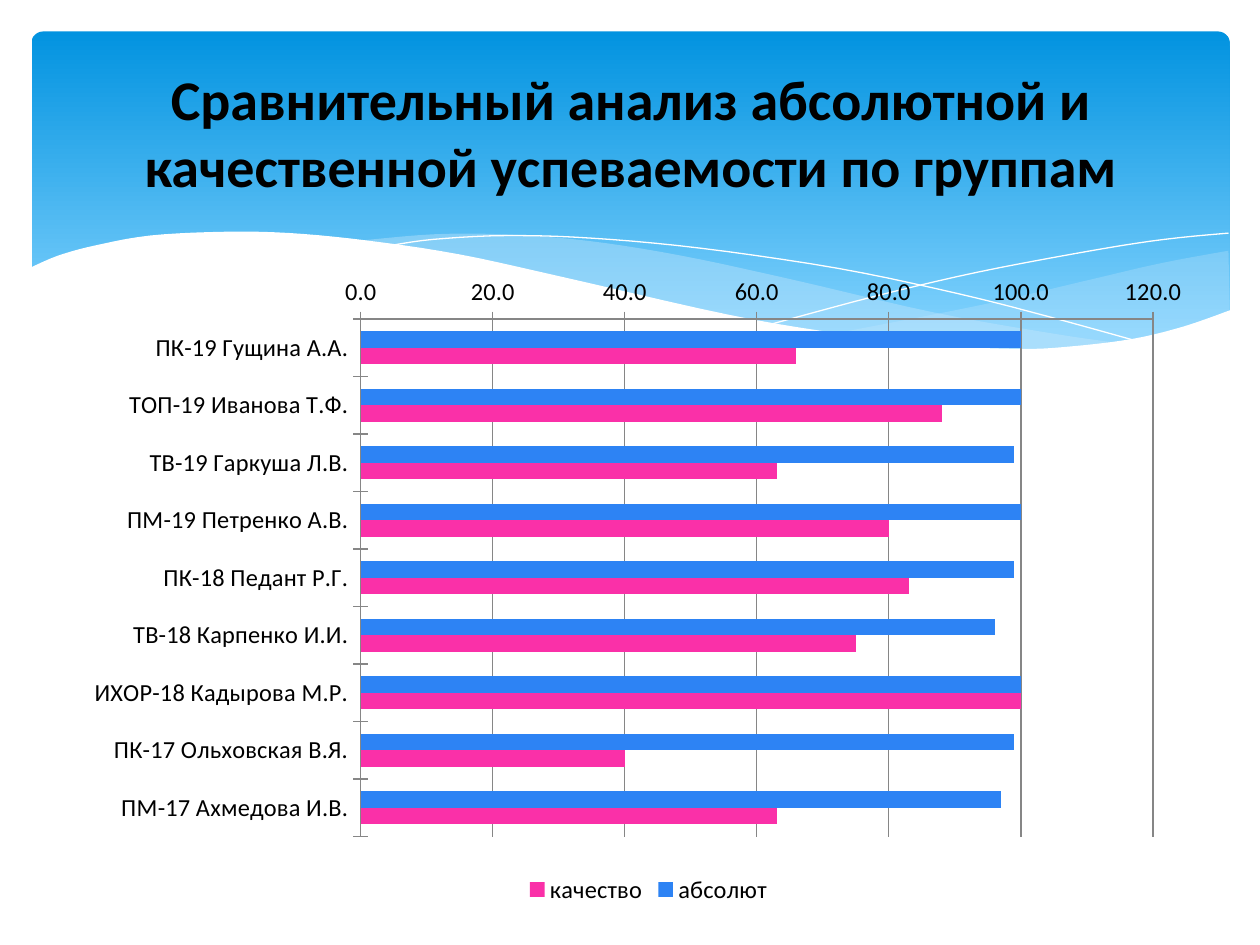
from lxml import etree
from pptx import Presentation
from pptx import util as u
from pptx.chart.data import CategoryChartData
from pptx.dml.color import RGBColor
from pptx.enum import chart as ch, shapes, text
from pptx.oxml import parse_xml
from pptx.oxml.ns import qn

FONT = "Calibri"
A = "http://schemas.openxmlformats.org/drawingml/2006/main"
C = "http://schemas.openxmlformats.org/drawingml/2006/chart"

# Each wave is a list of curves; a curve is a list of points it runs through.
RIGHT = [
    [(9.75, 1.99), (9.21, 2.09), (8.61, 2.23), (7.79, 2.42), (6.61, 2.65)],
    [(6.61, 2.65), (7.18, 2.72), (7.69, 2.77), (8.14, 2.78), (8.63, 2.75),
     (9.05, 2.69), (9.42, 2.59), (9.76, 2.47)],
]
MIDDLE = [
    [(8.93, 2.73), (8.37, 2.65), (7.41, 2.48), (6.29, 2.22), (5.41, 2.03),
     (4.65, 1.91), (3.99, 1.86), (3.44, 1.86), (2.86, 1.91)],
    [(2.86, 1.91), (3.62, 2.03), (4.49, 2.22), (5.3, 2.4), (6.18, 2.58),
     (6.95, 2.7), (7.61, 2.77), (8.18, 2.78), (8.93, 2.73)],
]
FRONT = [
    [(9.77, 2.46), (9.4, 2.59), (8.99, 2.69), (8.5, 2.75), (8.09, 2.77),
     (7.44, 2.74), (6.68, 2.65), (5.79, 2.5), (4.47, 2.2), (3.65, 2.02),
     (2.92, 1.91), (2.3, 1.85), (1.77, 1.84), (1.19, 1.87), (0.75, 1.95),
     (0.46, 2.03), (0.23, 2.13)],
    [(0.23, 3.29), (9.77, 3.29)],
]
LINES = [
    [[(3.09, 1.95), (3.44, 1.9), (4.01, 1.87), (4.69, 1.89), (5.56, 1.97),
      (6.65, 2.13), (7.6, 2.33), (8.31, 2.51), (9.07, 2.72)]],
    [[(6.13, 2.57), (6.95, 2.35), (7.76, 2.16), (8.66, 1.99), (9.24, 1.9),
      (9.75, 1.85)]],
]

GROUPS = ["ПК-19 Гущина А.А.", "ТОП-19 Иванова Т.Ф.", "ТВ-19 Гаркуша Л.В.",
          "ПМ-19 Петренко А.В.", "ПК-18 Педант Р.Г.", "ТВ-18 Карпенко И.И.",
          "ИХОР-18 Кадырова М.Р.", "ПК-17 Ольховская В.Я.",
          "ПМ-17 Ахмедова И.В."]
SERIES = [
    ("абсолют", "2D83F4", [100, 100, 99, 100, 99, 96, 100, 99, 97]),
    ("качество", "FA30A8", [66, 88, 63, 80, 83, 75, 100, 40, 63]),
]


def rgb(code):
    return RGBColor.from_string(code)


def box(*sizes):
    return [u.Inches(size) for size in sizes]


def spline(points, steps=5):
    """Smooth a run of points with a Catmull-Rom curve."""
    if len(points) < 3:
        return points
    ends = [points[0], *points, points[-1]]
    out = [points[0]]
    for quad in zip(ends, ends[1:], ends[2:], ends[3:]):
        for step in range(1, steps + 1):
            t = step / steps
            out.append(tuple(
                b + t * (c - a) / 2 + t * t * (2 * a - 5 * b + 4 * c - d) / 2
                + t ** 3 * (3 * b - a - 3 * c + d) / 2
                for a, b, c, d in zip(*quad)))
    return out


def add_wave(slide, curves, fill=None, alpha=None):
    """Draw a filled wave, or a thin white line when there is no fill."""
    points = [box(*point) for curve in curves for point in spline(curve)]
    pen = slide.shapes.build_freeform(*points[0])
    pen.add_line_segments(points[1:], close=fill is not None)
    wave = pen.convert_to_shape()
    wave.shadow.inherit = False
    if fill is None:
        wave.fill.background()
        wave.line.color.rgb = rgb("FFFFFF")
        wave.line.width = u.Pt(0)
        return
    wave.fill.solid()
    wave.fill.fore_color.rgb = rgb(fill)
    wave.line.fill.background()
    if alpha:
        color = wave._element.spPr.find(f".//{{{A}}}srgbClr")
        etree.SubElement(color, qn("a:alpha"), val=str(alpha * 1000))


def add_banner(slide):
    banner = slide.shapes.add_shape(
        shapes.MSO_SHAPE.ROUNDED_RECTANGLE, *box(0.25, 0.25, 9.51, 2.7))
    banner.adjustments[0] = 0.034
    banner.shadow.inherit = False
    banner.line.fill.background()
    banner.fill.gradient()
    banner.fill.gradient_angle = 270
    stops = zip(banner.fill.gradient_stops, ("0293E0", "83D3FE"), (0, 0.9))
    for stop, color, place in stops:
        stop.color.rgb = rgb(color)
        stop.position = place


def set_title(slide, words):
    title = slide.shapes.title
    title.left, title.top, title.width, title.height = box(0.51, 0.36, 9, 1.37)
    frame = title.text_frame
    frame.text = words
    frame.word_wrap = True
    frame.vertical_anchor = text.MSO_ANCHOR.MIDDLE
    line = frame.paragraphs[0]
    line.alignment = text.PP_ALIGN.CENTER
    font = line.runs[0].font
    font.name, font.size, font.bold = FONT, u.Pt(32), True
    font.color.rgb = rgb("000000")
    slide.shapes._spTree.append(title._element)  # in front of the waves


def place_plot(chart, x, y, w, h):
    """Fix the inner plot area, in fractions of the chart."""
    parts = "".join(f'<c:{tag} val="{val}"/>' for tag, val in (
        ("layoutTarget", "inner"), ("xMode", "edge"), ("yMode", "edge"),
        ("x", x), ("y", y), ("w", w), ("h", h)))
    area = chart._chartSpace.chart.plotArea
    for old in area.findall(qn("c:layout")):
        area.remove(old)
    area.insert(0, parse_xml(
        f'<c:layout xmlns:c="{C}"><c:manualLayout>{parts}'
        '</c:manualLayout></c:layout>'))


def add_bars(slide):
    data = CategoryChartData(number_format="0.0")
    data.categories = GROUPS
    for name, _, values in SERIES:
        data.add_series(name, values)
    chart = slide.shapes.add_chart(
        ch.XL_CHART_TYPE.BAR_CLUSTERED, *box(0.75, 2.18, 8.74, 5.04),
        data).chart
    chart.has_title = False
    chart.font.name, chart.font.size = FONT, u.Pt(14)
    chart.font.color.rgb = rgb("000000")
    chart.has_legend = True
    chart.legend.position = ch.XL_LEGEND_POSITION.BOTTOM
    chart.legend.include_in_layout = False
    plot = chart.plots[0]
    plot.gap_width, plot.overlap, plot.vary_by_categories = 150, 0, False
    for bars, (_, color, _) in zip(plot.series, SERIES):
        bars.format.fill.solid()
        bars.format.fill.fore_color.rgb = rgb(color)
    cats, vals = chart.category_axis, chart.value_axis
    cats.reverse_order = True
    vals.minimum_scale, vals.maximum_scale, vals.major_unit = 0, 120, 20
    vals.has_major_gridlines = True
    vals.tick_labels.number_format = "0.0"
    vals.tick_labels.number_format_is_linked = False
    for axis in (cats, vals):
        axis.major_tick_mark = ch.XL_TICK_MARK.CROSS
    for part in (cats, vals, vals.major_gridlines):
        part.format.line.color.rgb = rgb("868686")
        part.format.line.width = u.Pt(0.75)
    place_plot(chart, 0.237, 0.07, 0.724, 0.815)


def main():
    deck = Presentation()
    deck.slide_width, deck.slide_height = box(10, 7.5)
    slide = deck.slides.add_slide(deck.slide_layouts[5])
    add_banner(slide)
    add_wave(slide, RIGHT, "C6E7FC", 29)
    add_wave(slide, MIDDLE, "C6E7FC", 40)
    for line in LINES:
        add_wave(slide, line)
    add_wave(slide, FRONT, "FFFFFF")
    set_title(slide, "Сравнительный анализ абсолютной и качественной "
                     "успеваемости по группам")
    add_bars(slide)
    deck.save("out.pptx")


if __name__ == "__main__":
    main()
